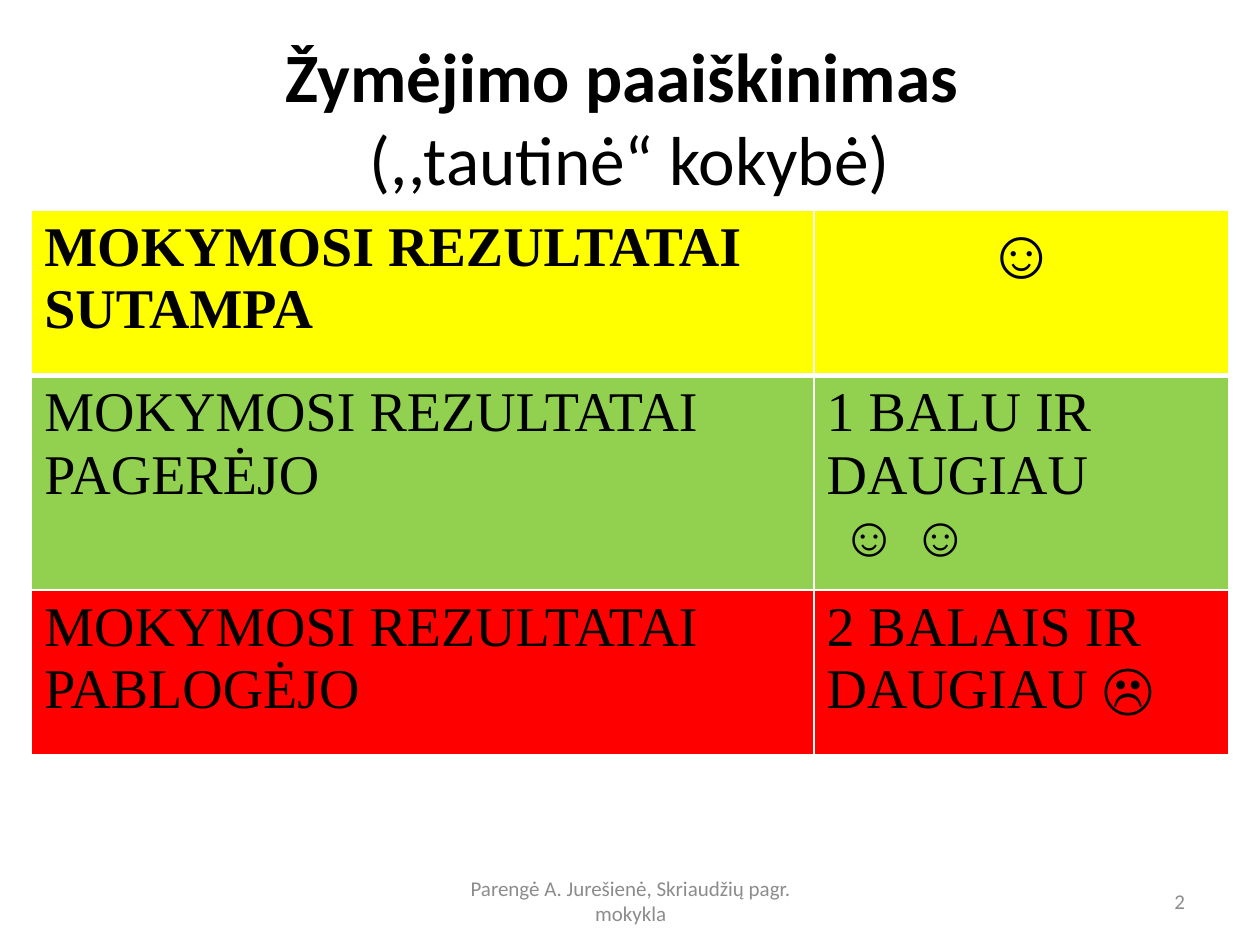
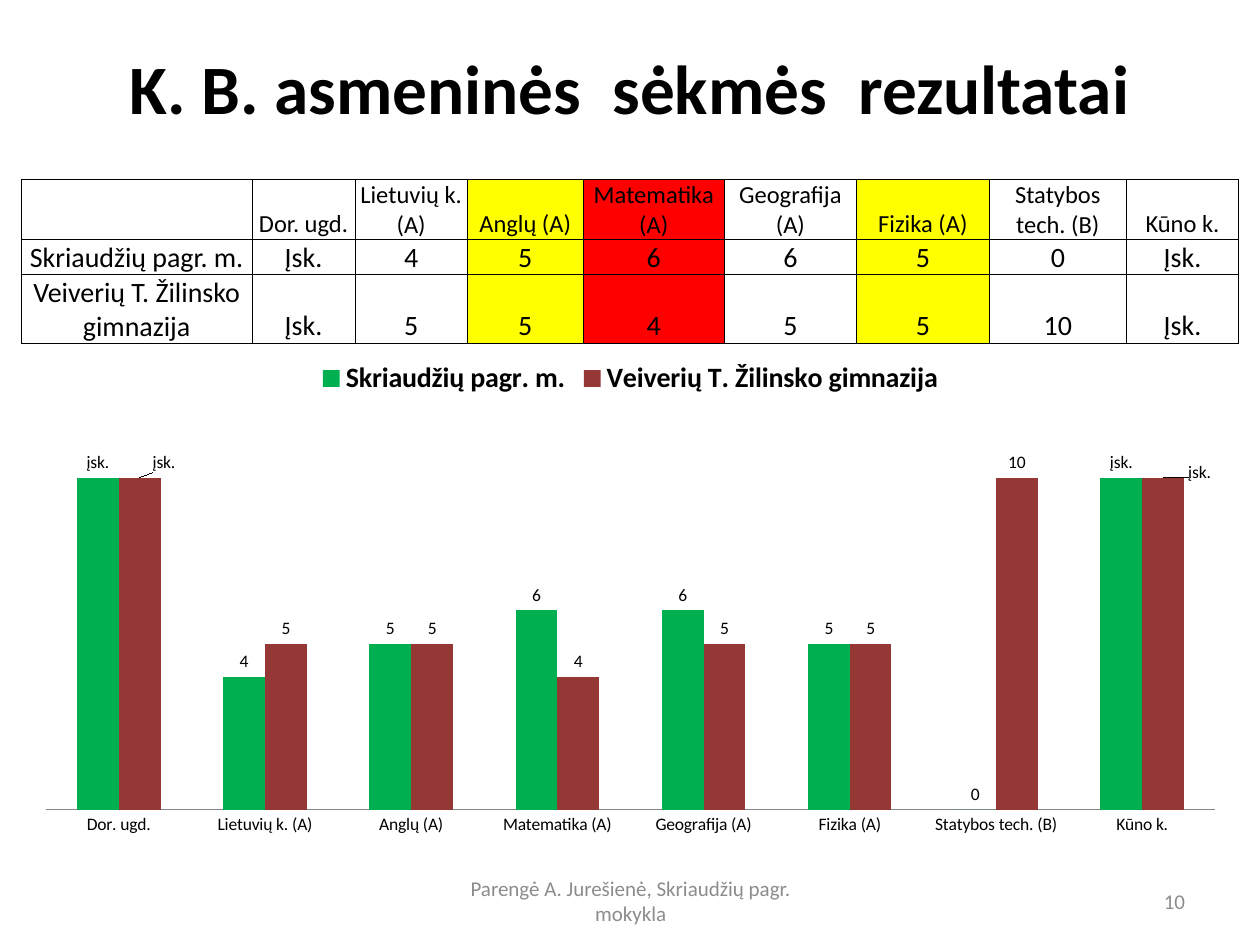
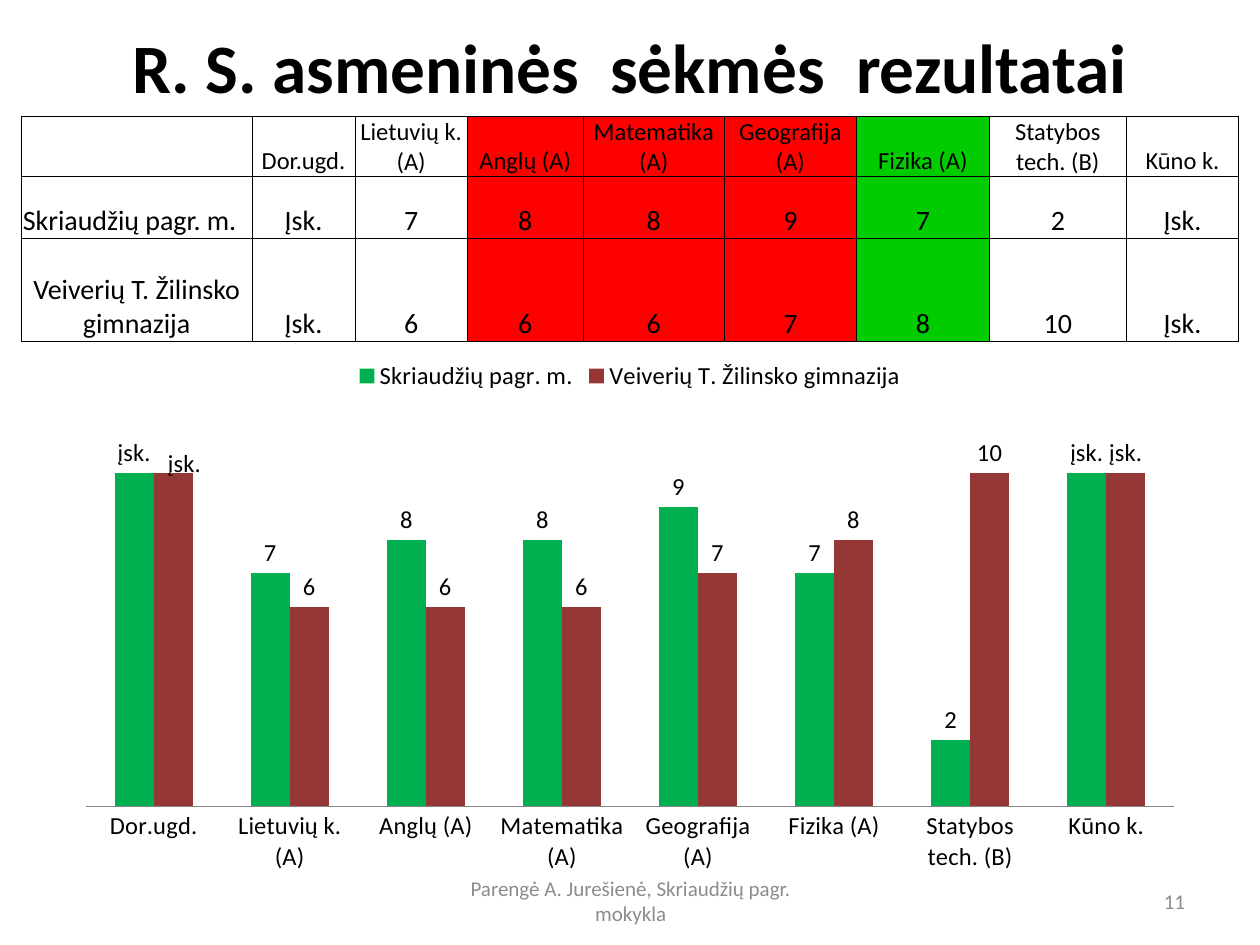
from lxml import etree
from pptx import Presentation
from pptx import util as u
from pptx.chart.data import CategoryChartData
from pptx.dml.color import RGBColor
from pptx.enum import chart as ch, text
from pptx.oxml import parse_xml
from pptx.oxml.ns import nsdecls, qn

YELLOW, LIME, GREEN, RED = "FFFF00", "92D050", "00CC00", "FF0000"
BLACK, WHITE, GREY, AXIS = "000000", "FFFFFF", "8C8C8C", "868686"
SERIES_COLORS = ("00B050", "953735")
SANS, SERIF = "Calibri", "Times New Roman"
LEFT, CENTER, RIGHT = text.PP_ALIGN.LEFT, text.PP_ALIGN.CENTER, text.PP_ALIGN.RIGHT

FOOTER = "Parengė A. Jurešienė, Skriaudžių pagr. mokykla"
SCHOOLS = ("Skriaudžių pagr. m.", "Veiverių T. Žilinsko gimnazija")
SUBJECTS = ["Lietuvių k. (A)", "Anglų (A)", "Matematika (A)", "Geografija (A)",
            "Fizika (A)", "Statybos tech. (B)", "Kūno k."]
PASS, PASS_HEIGHT = "Įsk.", 10
RESULT_COLS = (4.65, 2.08, 2.26, 2.34, 2.84, 2.67, 2.67, 2.77, 2.26)


def rgb(color):
    return RGBColor.from_string(color)


def style_font(font, size, color=BLACK, name=SANS, bold=False):
    font.size, font.name, font.bold = u.Pt(size), name, bold
    font.color.rgb = rgb(color)


def put(p, string, align=LEFT, **fmt):
    """Add a formatted run to a paragraph."""
    p.alignment = align
    r = p.add_run()
    r.text = string
    style_font(r.font, **fmt)


def box(*lengths):
    return [u.Cm(n) for n in lengths]


def set_borders(cell, color, **widths):
    tc_pr = cell._tc.get_or_add_tcPr()
    for side in "LRTB":
        ln = etree.SubElement(tc_pr, qn(f"a:ln{side}"), w=str(u.Pt(widths[side])))
        fill = etree.SubElement(ln, qn("a:solidFill"))
        etree.SubElement(fill, qn("a:srgbClr"), val=color)


class Deck:
    def __init__(self):
        self.prs = Presentation()
        self.prs.slide_width, self.prs.slide_height = box(25.4, 19.05)
        self.s = None

    def slide(self, number, title_height, *title_lines):
        """Start a slide; each title line is a (string, bold) pair."""
        self.s = self.prs.slides.add_slide(self.prs.slide_layouts[5])
        sp = self.s.shapes.title
        sp.left, sp.top, sp.width, sp.height = box(1.27, 0.76, 22.86, title_height)
        tf = sp.text_frame
        tf.auto_size = text.MSO_AUTO_SIZE.NONE
        tf.vertical_anchor = text.MSO_ANCHOR.MIDDLE
        p = tf.paragraphs[0]
        for i, (string, bold) in enumerate(title_lines):
            if i:
                p.add_line_break()
            put(p, string, CENTER, size=39.6, bold=bold)
        self.footer(FOOTER, 8.69, 8.05, CENTER)
        self.footer(str(number), 18.21, 5.93, RIGHT)

    def footer(self, string, left, width, align):
        tf = self.s.shapes.add_textbox(*box(left, 17.65, width, 1.02)).text_frame
        tf.word_wrap = True
        tf.vertical_anchor = text.MSO_ANCHOR.MIDDLE
        put(tf.paragraphs[0], string, align, size=12, color=GREY)

    def table(self, left, top, cols, rows):
        """Add a plain table with the given column widths and row heights."""
        frame = self.s.shapes.add_table(len(rows), len(cols),
                                        *box(left, top, sum(cols), sum(rows)))
        table = frame.table
        table.first_row = table.horz_banding = False
        for col, width in zip(table.columns, cols):
            col.width = u.Cm(width)
        for row, height in zip(table.rows, rows):
            row.height = u.Cm(height)
        return table

    def cell(self, cell, fill, color, L=0.5, R=0.5, T=0.5, B=0.5):
        set_borders(cell, color, L=L, R=R, T=T, B=B)
        if fill:
            cell.fill.solid()
            cell.fill.fore_color.rgb = rgb(fill)
        else:
            cell.fill.background()

    def legend_table(self, rows):
        """Rows hold a fill, a text, its weight and paragraphs of runs."""
        table = self.table(0.64, 4.24, (15.77, 8.36), (3.33, 4.32, 3.33))
        for i, (fill, label, bold, align, paragraphs) in enumerate(rows):
            for cell in table.rows[i].cells:
                self.cell(cell, fill, WHITE, 1, 1, 3 if i == 1 else 1, 3 if i == 0 else 1)
            put(table.cell(i, 0).text_frame.paragraphs[0], label,
                size=32, name=SERIF, bold=bold)
            tf = table.cell(i, 1).text_frame
            for j, runs in enumerate(paragraphs):
                p = tf.add_paragraph() if j else tf.paragraphs[0]
                for string, size, run_bold in runs:
                    put(p, string, align, size=size, name=SERIF, bold=run_bold)

    def result_table(self, top, heights, subjects, marks, fills, first_align):
        table = self.table(0.43, top, RESULT_COLS, heights)
        rows = [["", *subjects]] + [[name, *row] for name, row in zip(SCHOOLS, marks)]
        for i, row in enumerate(rows):
            for j, value in enumerate(row):
                cell = table.cell(i, j)
                self.cell(cell, fills.get(j), BLACK)
                cell.vertical_anchor = text.MSO_ANCHOR.BOTTOM
                cell.margin_left = cell.margin_right = cell.margin_top = u.Cm(0.03)
                cell.margin_bottom = 0
                if value != "":
                    align = first_align if (i, j) == (1, 0) else CENTER
                    put(cell.text_frame.paragraphs[0], str(value), align,
                        size=16 if i else 14)

    def result_chart(self, place, subjects, marks, size, legend, shifts):
        """Shifts move labels of the second series: {point: (x, y)}."""
        data = CategoryChartData()
        data.categories = subjects
        for name, row in zip(SCHOOLS, marks):
            data.add_series(name, [PASS_HEIGHT if m == PASS else m for m in row])
        chart = self.s.shapes.add_chart(ch.XL_CHART_TYPE.COLUMN_CLUSTERED,
                                        *box(*place), data).chart
        style_font(chart.font, size)
        chart.has_title = False
        chart.has_legend = True
        chart.legend.position = ch.XL_LEGEND_POSITION.TOP
        chart.legend.include_in_layout = False
        style_font(chart.legend.font, **legend)

        # Axes
        values, cats = chart.value_axis, chart.category_axis
        values.minimum_scale, values.maximum_scale = 0, 12
        values.has_major_gridlines = values.visible = False
        cats.major_tick_mark = ch.XL_TICK_MARK.NONE
        cats.format.line.color.rgb = rgb(AXIS)

        # Columns and their labels
        plot = chart.plots[0]
        plot.gap_width, plot.overlap, plot.vary_by_categories = 150, 0, False
        for k, (series, row) in enumerate(zip(plot.series, marks)):
            series.format.fill.solid()
            series.format.fill.fore_color.rgb = rgb(SERIES_COLORS[k])
            labels = series.data_labels
            labels.show_value = True
            labels.position = ch.XL_LABEL_POSITION.OUTSIDE_END
            style_font(labels.font, size)
            for i, mark in enumerate(row):
                if mark == PASS:
                    label = series.points[i].data_label
                    put(label.text_frame.paragraphs[0], PASS.lower(), CENTER, size=size)
                    label.position = ch.XL_LABEL_POSITION.OUTSIDE_END
                    if k == 1 and i in shifts:
                        self.shift_label(labels, i, *shifts[i])

    def shift_label(self, labels, point, x, y):
        d_lbl = labels._element.xpath(f'c:dLbl[c:idx/@val="{point}"]')[0]
        for old in d_lbl.findall(qn("c:layout")):
            d_lbl.remove(old)
        d_lbl.insert(1, parse_xml(
            f'<c:layout {nsdecls("c")}><c:manualLayout><c:x val="{x}"/>'
            f'<c:y val="{y}"/></c:manualLayout></c:layout>'))


def main():
    deck = Deck()

    # Explanation of the colours and signs
    deck.slide(2, 3.18, ("Žymėjimo paaiškinimas ", True), ("(,,tautinė“ kokybė)", False))
    deck.legend_table([
        (YELLOW, "MOKYMOSI REZULTATAI SUTAMPA", True, CENTER, [[("☺", 40, True)]]),
        (LIME, "MOKYMOSI REZULTATAI PAGERĖJO", False, LEFT,
         [[("1 BALU IR DAUGIAU", 32, False)], [(" ☺ ☺", 32, True)]]),
        (RED, "MOKYMOSI REZULTATAI PABLOGĖJO", False, LEFT,
         [[("2 BALAIS IR DAUGIAU ", 32, False), ("☹", 32, True)]]),
    ])

    # Results of the first pupil
    subjects = ["Dor. ugd.", *SUBJECTS]
    marks = [[PASS, 4, 5, 6, 6, 5, 0, PASS], [PASS, 5, 5, 4, 5, 5, 10, PASS]]
    deck.slide(10, 1.98, ("K. B. asmeninės  sėkmės  rezultatai", True))
    deck.result_chart((0.43, 6.99, 24.56, 10.03), subjects, marks, 10,
                      {"size": 16, "bold": True}, {0: (0.02, 0), 7: (0.03, 0.02)})
    deck.result_table(3.61, (1.14, 0.69, 1.14), subjects, marks,
                      {3: YELLOW, 4: RED, 6: YELLOW}, CENTER)

    # Results of the second pupil
    subjects = ["Dor.ugd.", *SUBJECTS]
    marks = [[PASS, 7, 8, 8, 9, 7, 2, PASS], [PASS, 6, 6, 6, 7, 8, 10, PASS]]
    deck.slide(11, 1.14, ("R. S. asmeninės  sėkmės  rezultatai", True))
    deck.result_chart((1.27, 6.99, 22.86, 10.8), subjects, marks, 14,
                      {"size": 14}, {0: (0.01, 0.02)})
    deck.result_table(2.34, (1.07, 1.24, 2.08), subjects, marks,
                      {3: RED, 4: RED, 5: RED, 6: GREEN}, LEFT)

    deck.prs.save("out.pptx")


if __name__ == "__main__":
    main()
